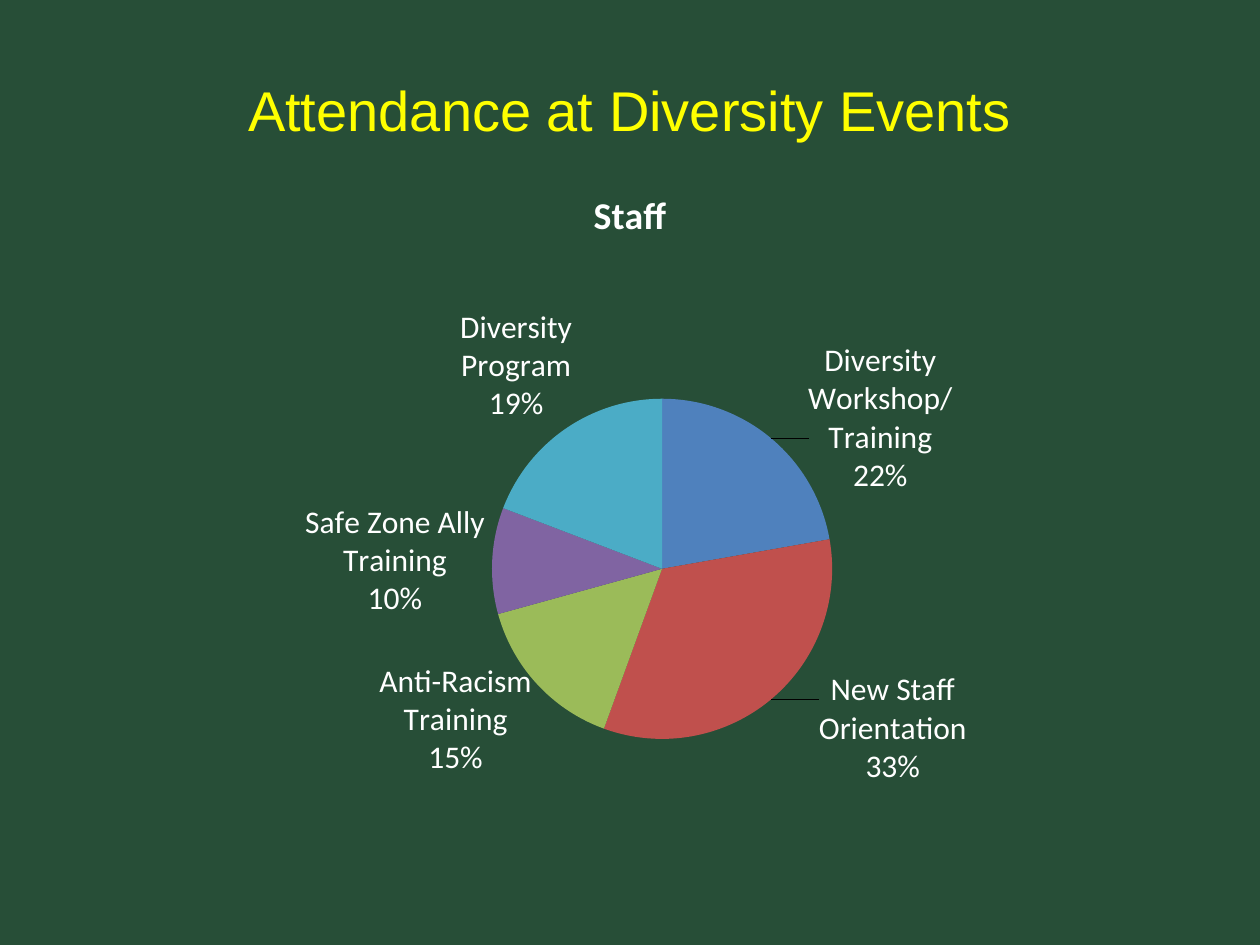
from lxml import etree
from pptx import Presentation
from pptx.chart.data import CategoryChartData
from pptx.dml.color import RGBColor
from pptx.enum.chart import XL_CHART_TYPE, XL_LABEL_POSITION
from pptx.enum.text import MSO_ANCHOR, PP_ALIGN
from pptx.oxml.ns import qn
from pptx.util import Inches, Pt

PIE = XL_CHART_TYPE.PIE
OUTSIDE = XL_LABEL_POSITION.OUTSIDE_END
CENTER = PP_ALIGN.CENTER
MIDDLE = MSO_ANCHOR.MIDDLE

COLORS = {
    "background": "274E37",
    "heading": "FFFF00",
    "text": "FFFFFF",
    "workshop": "4F81BD",
    "orientation": "C0504D",
    "anti_racism": "9BBB59",
    "safe_zone": "8064A2",
    "program": "4BACC6",
}
ATTENDANCE = [
    ("Diversity Workshop/Training", 22, "workshop"),
    ("New Staff Orientation", 33, "orientation"),
    ("Anti-Racism Training", 15, "anti_racism"),
    ("Safe Zone Ally Training", 10, "safe_zone"),
    ("Diversity Program", 19, "program"),
]
LABEL_SHIFTS = {0: (0.03, 0.09), 1: (0.04, -0.05), 2: (0, -0.04), 4: (0.01, 0)}
WORKSHOP_LABEL = "Diversity Workshop/\nTraining\n22%"


def style_font(font, size, color, name, bold=False):
    font.size, font.name, font.bold = Pt(size), name, bold
    font.color.rgb = RGBColor.from_string(COLORS[color])


def write(frame, text, align=CENTER, **style):
    frame.text = text
    for paragraph in frame.paragraphs:
        paragraph.alignment = align
        for run in paragraph.runs:
            style_font(run.font, **style)


def manual_layout(**settings):
    layout = etree.Element(qn("c:layout"))
    manual = etree.SubElement(layout, qn("c:manualLayout"))
    for tag, value in settings.items():
        etree.SubElement(manual, qn(f"c:{tag}")).set("val", str(value))
    return layout


def break_lines(labels):
    separator = etree.Element(qn("c:separator"))
    separator.text = "\n"
    labels.find(qn("c:showBubbleSize")).addnext(separator)


class Deck:
    """Hold the style and the current slide; lengths are shares of the slide."""

    label_style = {"size": 18, "color": "text", "name": "Calibri"}

    def __init__(self, width, height):
        self.prs = Presentation()
        self.prs.slide_width, self.prs.slide_height = Inches(width), Inches(height)
        self.slide = self.prs.slides.add_slide(self.prs.slide_layouts[6])
        fill = self.slide.background.fill
        fill.solid()
        fill.fore_color.rgb = RGBColor.from_string(COLORS["background"])

    def box(self, left, top, width, height):
        across, down = self.prs.slide_width, self.prs.slide_height
        return [int(share * side) for share, side in
                ((left, across), (top, down), (width, across), (height, down))]

    def heading(self, text, *place):
        frame = self.slide.shapes.add_textbox(*self.box(*place)).text_frame
        frame.word_wrap = True
        frame.vertical_anchor = MIDDLE
        write(frame, text, size=32, color="heading", name="Arial")

    def pie(self, title, rows, *place):
        data = CategoryChartData(number_format="0")
        data.categories = [name for name, _, _ in rows]
        data.add_series(title, [value for _, value, _ in rows])
        chart = self.slide.shapes.add_chart(PIE, *self.box(*place), data).chart
        chart.has_legend = False
        style_font(chart.font, **self.label_style)
        write(chart.chart_title.text_frame, title, size=21.6, color="text",
              name="Calibri", bold=True)
        chart.chart_title.include_in_layout = False
        plot = chart.plots[0]
        plot.vary_by_categories = True
        series = plot.series[0]
        for point, (_, _, color) in enumerate(rows):
            fill = series.points[point].format.fill
            fill.solid()
            fill.fore_color.rgb = RGBColor.from_string(COLORS[color])
        self.place_pie(chart)
        self.label_slices(series)

    def place_pie(self, chart):
        area = chart.element.find(".//" + qn("c:plotArea"))
        for layout in area.findall(qn("c:layout")):
            area.remove(layout)
        area.insert(0, manual_layout(layoutTarget="inner", xMode="edge",
                                     yMode="edge", x=0.37, y=0.35, w=0.32, h=0.5))

    def label_slices(self, series):
        labels = series.data_labels
        labels.show_category_name = labels.show_percentage = True
        labels.show_value = False
        labels.position = OUTSIDE
        style_font(labels.font, **self.label_style)
        for point in LABEL_SHIFTS:
            label = series.points[point].data_label
            style_font(label.font, **self.label_style)
            label.position = OUTSIDE
        write(series.points[0].data_label.text_frame, WORKSHOP_LABEL,
              **self.label_style)
        group = series.data_labels.font and series.points[0].data_label and \
            series._element.find(qn("c:dLbls"))
        break_lines(group)
        shows = {"showVal": "0", "showCatName": "1", "showPercent": "1"}
        for label, (x, y) in zip(group.findall(qn("c:dLbl")), LABEL_SHIFTS.values()):
            label.find(qn("c:idx")).addnext(manual_layout(x=x, y=y))
            for tag, value in shows.items():
                label.find(qn(f"c:{tag}")).set("val", value)
            break_lines(label)


def main():
    deck = Deck(10, 7.5)
    deck.heading("Attendance at Diversity Events", 0.075, 0.03, 0.85, 0.17)
    deck.pie("Staff", ATTENDANCE, 0.075, 0.17, 0.85, 0.72)
    deck.prs.save("out.pptx")


if __name__ == "__main__":
    main()
